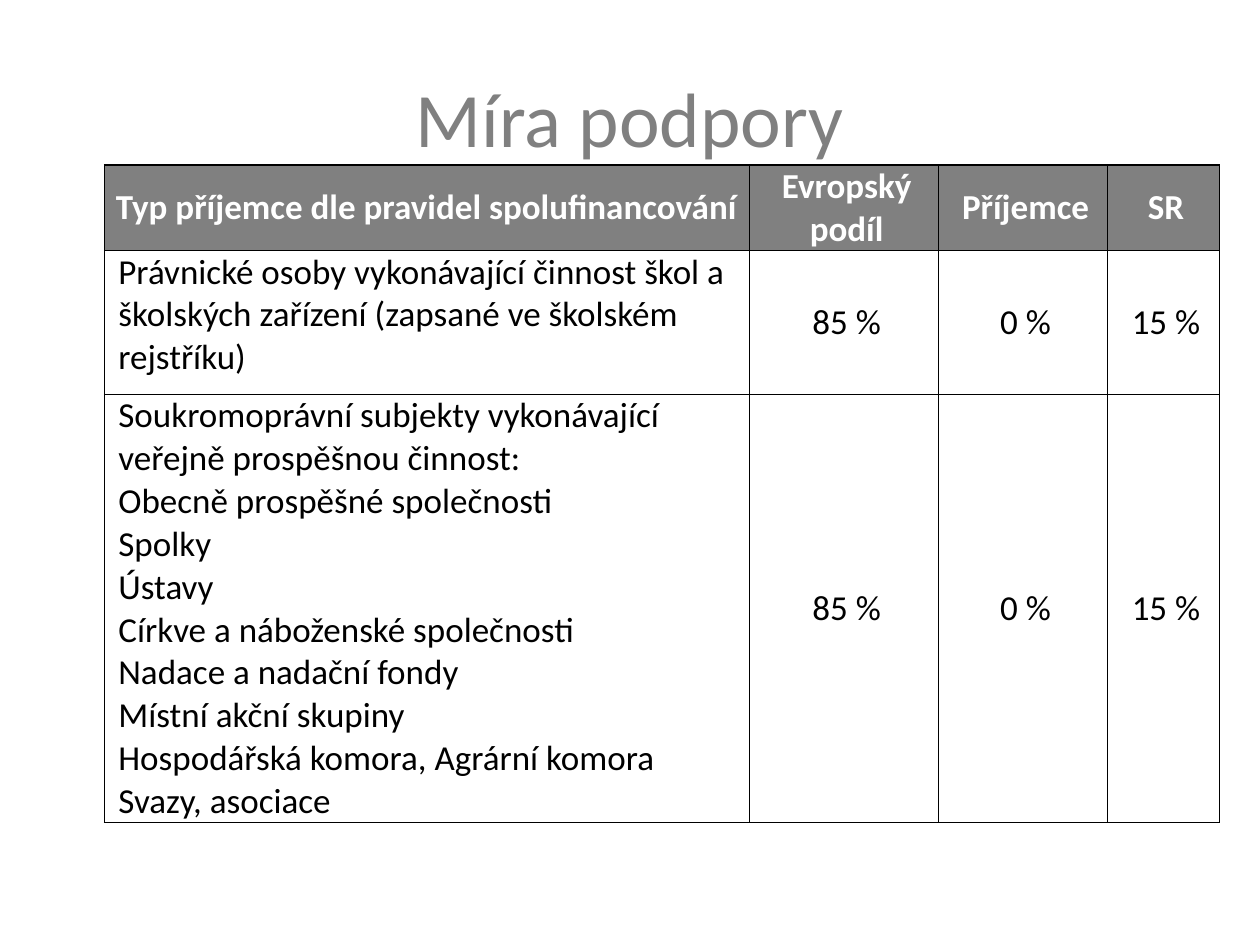
from lxml import etree
from pptx import Presentation
from pptx.dml.color import RGBColor
from pptx.enum.text import MSO_ANCHOR, PP_ALIGN
from pptx.oxml.ns import qn
from pptx.util import Inches, Pt

LEFT, CENTER = PP_ALIGN.LEFT, PP_ALIGN.CENTER
TOP, MIDDLE = MSO_ANCHOR.TOP, MSO_ANCHOR.MIDDLE
FONT = "Calibri"
COLORS = {"gray": "808080", "white": "FFFFFF", "black": "000000"}

COL_WIDTHS = [5.12, 1.5, 1.34, 0.89]
ROW_HEIGHTS = [0.68, 1.14, 3.4]
SHARES = ["85 %", "0 %", "15 %"]
PRIVATE_ENTITIES = [
    "Soukromoprávní subjekty vykonávající veřejně prospěšnou činnost:",
    "Obecně prospěšné společnosti",
    "Spolky",
    "Ústavy",
    "Církve a náboženské společnosti",
    "Nadace a nadační fondy",
    "Místní akční skupiny",
    "Hospodářská komora, Agrární komora",
    "Svazy, asociace",
]
ROWS = [
    ["Typ příjemce dle pravidel spolufinancování", "Evropský podíl", "Příjemce", "SR"],
    ["Právnické osoby vykonávající činnost škol a školských zařízení "
     "(zapsané ve školském rejstříku)", *SHARES],
    ["\n".join(PRIVATE_ENTITIES), *SHARES],
]


def format_text(tf, size, color, align, bold=False):
    for p in tf.paragraphs:
        p.alignment = align
        for r in p.runs:
            r.font.name = FONT
            r.font.size = Pt(size)
            r.font.bold = bold
            r.font.color.rgb = RGBColor.from_string(COLORS[color])


def add_title(slide, text):
    sp = slide.shapes.add_textbox(Inches(0.5), Inches(0.3), Inches(9), Inches(1.25))
    tf = sp.text_frame
    tf.word_wrap = True
    tf.vertical_anchor = MIDDLE
    tf.text = text
    format_text(tf, 44, "gray", CENTER)


def set_borders(cell, color):
    """Draw a 1 pt line on all four sides; lines must precede the fill in tcPr."""
    tc_pr = cell._tc.get_or_add_tcPr()
    for i, side in enumerate(("a:lnL", "a:lnR", "a:lnT", "a:lnB")):
        ln = etree.Element(qn(side), w=str(Pt(1)))
        fill = etree.SubElement(ln, qn("a:solidFill"))
        etree.SubElement(fill, qn("a:srgbClr"), val=COLORS[color])
        tc_pr.insert(i, ln)


def format_cell(cell, is_header, is_first_column):
    is_body_label = is_first_column and not is_header
    cell.margin_left = cell.margin_right = Inches(0.07 if is_body_label else 0.05)
    cell.margin_top = cell.margin_bottom = 0
    cell.vertical_anchor = TOP if is_body_label else MIDDLE
    if is_header:
        cell.fill.solid()
        cell.fill.fore_color.rgb = RGBColor.from_string(COLORS["gray"])
    else:
        cell.fill.background()
    format_text(cell.text_frame, 20, "white" if is_header else "black",
                LEFT if is_first_column else CENTER, bold=is_header)
    for p in cell.text_frame.paragraphs:
        p._p.get_or_add_pPr().set("marL", str(Inches(0.04)))
    set_borders(cell, "black")


def add_support_table(slide):
    table = slide.shapes.add_table(
        len(ROWS), len(COL_WIDTHS), Inches(0.83), Inches(1.31),
        Inches(sum(COL_WIDTHS)), Inches(sum(ROW_HEIGHTS))).table
    table.horz_banding = False
    for column, width in zip(table.columns, COL_WIDTHS):
        column.width = Inches(width)
    for i, (row, height) in enumerate(zip(table.rows, ROW_HEIGHTS)):
        row.height = Inches(height)
        for j, text in enumerate(ROWS[i]):
            cell = table.cell(i, j)
            cell.text_frame.text = text
            format_cell(cell, is_header=i == 0, is_first_column=j == 0)


def main():
    prs = Presentation()
    prs.slide_width, prs.slide_height = Inches(10), Inches(7.5)
    slide = prs.slides.add_slide(prs.slide_layouts[6])
    add_title(slide, "Míra podpory")
    add_support_table(slide)
    prs.save("out.pptx")


if __name__ == "__main__":
    main()
